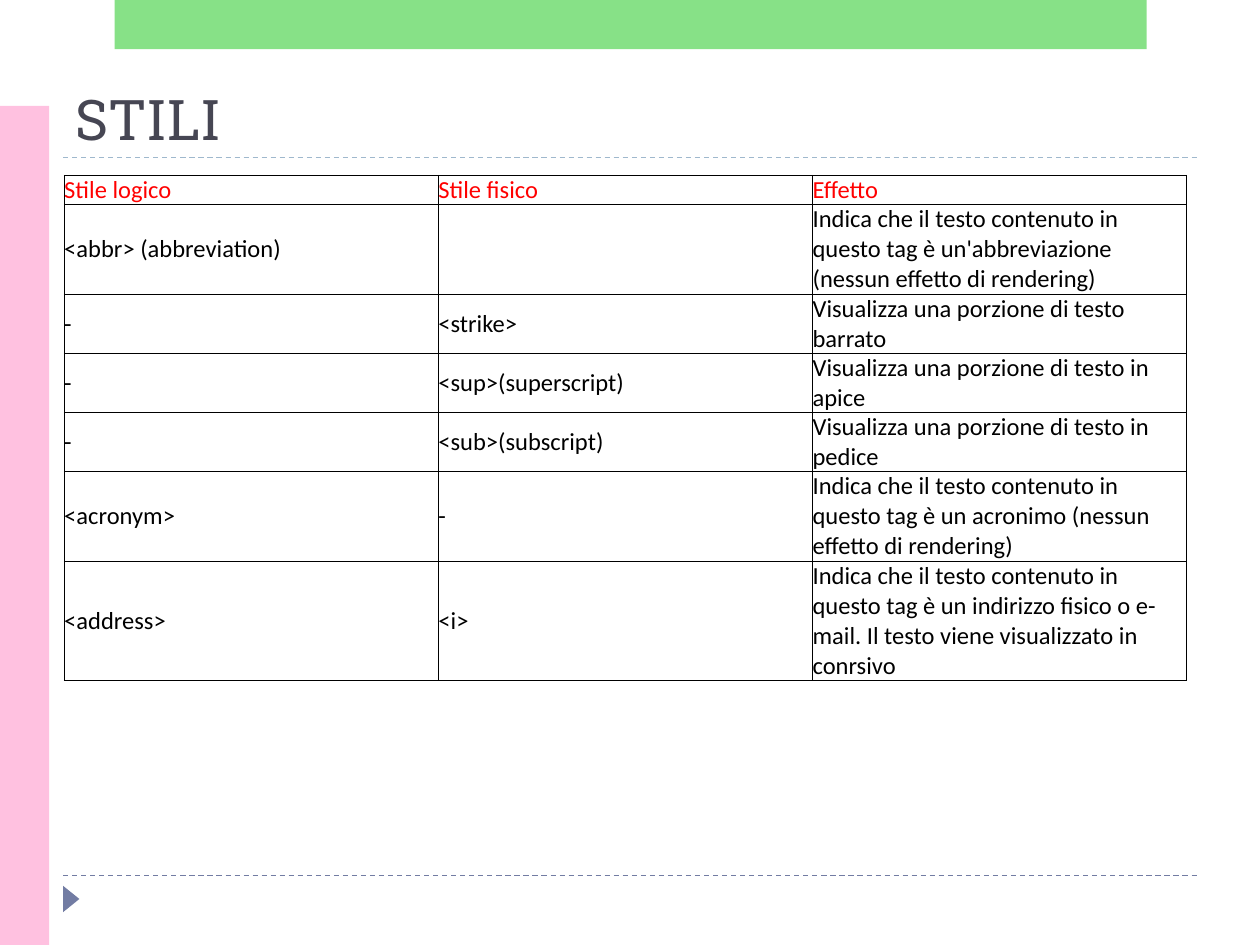
from lxml import etree
from pptx import Presentation
from pptx.dml.color import RGBColor
from pptx.enum.dml import MSO_LINE
from pptx.enum.shapes import MSO_CONNECTOR, MSO_SHAPE
from pptx.enum.text import MSO_ANCHOR
from pptx.oxml.ns import qn
from pptx.util import Inches, Pt

RECTANGLE = MSO_SHAPE.RECTANGLE
TRIANGLE = MSO_SHAPE.ISOSCELES_TRIANGLE
STRAIGHT = MSO_CONNECTOR.STRAIGHT
DASH = MSO_LINE.DASH
BOTTOM = MSO_ANCHOR.BOTTOM
MIDDLE = MSO_ANCHOR.MIDDLE

COLORS = {
    "rule_top": "9FB8CD",
    "accent": "727CA3",
    "side_band": "FFC1E0",
    "top_band": "62D862",
    "title": "464653",
    "header": "FF0000",
    "body": "000000",
    "border": "000000",
}
TITLE_FORMAT = {"name": "Roboto Slab", "size": Pt(32)}
CELL_FORMAT = {"name": "Calibri", "size": Pt(14)}
CELL_LAYOUT = {
    "margin_left": 0,
    "margin_right": 0,
    "margin_top": 0,
    "margin_bottom": 0,
    "vertical_anchor": MIDDLE,
}
COLUMN_WIDTH = 2.97
LINE_HEIGHT = 0.24
STYLES = [
    (1, "Stile logico", "Stile fisico", "Effetto"),
    (3, "<abbr> (abbreviation)", "",
     "Indica che il testo contenuto in questo tag è un'abbreviazione (nessun effetto di rendering)"),
    (2, "-", "<strike>", "Visualizza una porzione di testo barrato"),
    (2, "-", "<sup>(superscript)", "Visualizza una porzione di testo in apice"),
    (2, "-", "<sub>(subscript)", "Visualizza una porzione di testo in pedice"),
    (3, "<acronym>", "-",
     "Indica che il testo contenuto in questo tag è un acronimo (nessun effetto di rendering)"),
    (4, "<address>", "<i>",
     "Indica che il testo contenuto in questo tag è un indirizzo fisico o e-mail. "
     "Il testo viene visualizzato in conrsivo"),
]


def rgb(role):
    return RGBColor.from_string(COLORS[role])


def apply_format(target, values):
    for attribute, value in values.items():
        setattr(target, attribute, value)


def add_rule(slide, y, role):
    rule = slide.shapes.add_connector(STRAIGHT, Inches(0.5), Inches(y), Inches(9.5), Inches(y))
    rule.line.color.rgb = rgb(role)
    rule.line.width = Pt(0.75)
    rule.line.dash_style = DASH
    etree.SubElement(rule._element.spPr, qn("a:effectLst"))


def add_decoration(slide, preset, box, role, rotation=0, opacity=100):
    decoration = slide.shapes.add_shape(preset, *map(Inches, box))
    decoration.shadow.inherit = False
    decoration.rotation = rotation
    decoration.fill.solid()
    decoration.fill.fore_color.rgb = rgb(role)
    decoration.line.fill.background()
    if opacity < 100:
        color = decoration._element.spPr.find(qn("a:solidFill"))[0]
        etree.SubElement(color, qn("a:alpha"), val=str(opacity * 1000))


def add_title(slide, wording):
    frame = slide.shapes.add_textbox(Inches(0.5), Inches(0.55), Inches(9), Inches(0.7)).text_frame
    apply_format(frame, {"word_wrap": True, "vertical_anchor": BOTTOM})
    heading = frame.paragraphs[0]
    heading.text = wording
    apply_format(heading.font, TITLE_FORMAT)
    heading.font.color.rgb = rgb("title")


def set_borders(cell):
    properties = cell._tc.get_or_add_tcPr()
    for position, side in enumerate(("lnL", "lnR", "lnT", "lnB")):
        border = etree.Element(qn(f"a:{side}"), w=str(Pt(0.5)))
        fill = etree.SubElement(border, qn("a:solidFill"))
        etree.SubElement(fill, qn("a:srgbClr"), val=COLORS["border"])
        properties.insert(position, border)


def fill_cell(cell, wording, role):
    apply_format(cell, CELL_LAYOUT)
    cell.fill.background()
    set_borders(cell)
    paragraph = cell.text_frame.paragraphs[0]
    paragraph.text = wording
    apply_format(paragraph.font, CELL_FORMAT)
    paragraph.font.bold = False
    paragraph.font.color.rgb = rgb(role)


def add_style_table(slide):
    height = LINE_HEIGHT * sum(lines for lines, *_ in STYLES)
    table = slide.shapes.add_table(
        len(STYLES), 3, Inches(0.51), Inches(1.39), Inches(3 * COLUMN_WIDTH), Inches(height)
    ).table
    apply_format(table, {"first_row": False, "horz_banding": False})
    for column in table.columns:
        column.width = Inches(COLUMN_WIDTH)
    for index, (lines, *wordings) in enumerate(STYLES):
        table.rows[index].height = Inches(lines * LINE_HEIGHT - 0.01)
        for cell, wording in zip(table.rows[index].cells, wordings):
            fill_cell(cell, wording, "body" if index else "header")


def main():
    """Build the slide about HTML text styles."""
    deck = Presentation()
    deck.slide_width, deck.slide_height = Inches(10), Inches(7.5)
    slide = deck.slides.add_slide(deck.slide_layouts[6])
    add_rule(slide, 6.95, "accent")
    add_rule(slide, 1.25, "rule_top")
    add_decoration(slide, TRIANGLE, (0.46, 7.07, 0.21, 0.13), "accent", rotation=90)
    add_decoration(slide, RECTANGLE, (0, 0.84, 0.39, 6.66), "side_band")
    add_decoration(slide, RECTANGLE, (0.91, 0, 8.19, 0.39), "top_band", opacity=76)
    add_title(slide, "STILI")
    add_style_table(slide)
    deck.save("out.pptx")


if __name__ == "__main__":
    main()
